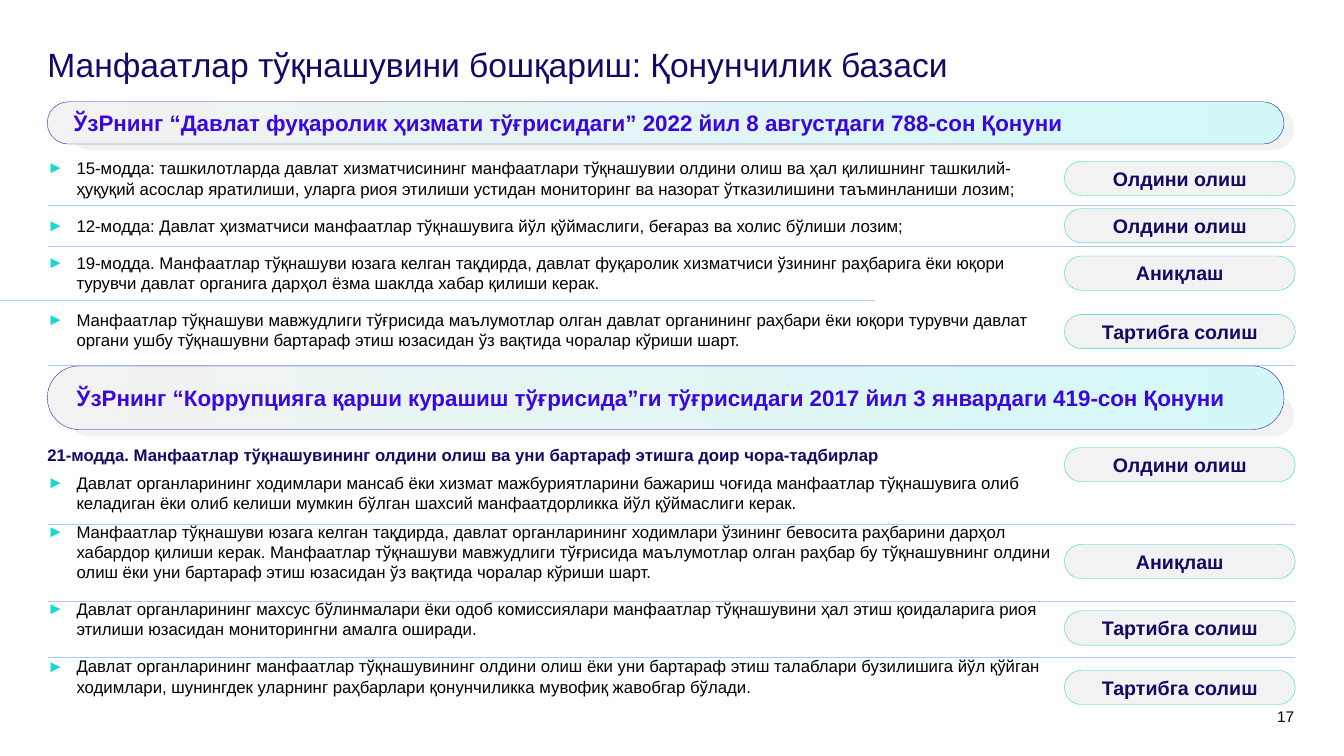
from dataclasses import dataclass

from lxml import etree
from pptx import Presentation
from pptx.dml.color import RGBColor
from pptx.enum.shapes import MSO_CONNECTOR, MSO_SHAPE
from pptx.enum.text import MSO_ANCHOR, MSO_AUTO_SIZE, PP_ALIGN
from pptx.oxml.ns import qn
from pptx.util import Pt

PILL = MSO_SHAPE.ROUNDED_RECTANGLE
STRAIGHT = MSO_CONNECTOR.STRAIGHT
MIDDLE, TOP = MSO_ANCHOR.MIDDLE, MSO_ANCHOR.TOP
GROW, FIXED = MSO_AUTO_SIZE.SHAPE_TO_FIT_TEXT, MSO_AUTO_SIZE.NONE
LEFT, CENTER, RIGHT = PP_ALIGN.LEFT, PP_ALIGN.CENTER, PP_ALIGN.RIGHT


@dataclass(frozen=True)
class Theme:
    font: str = "Arial"
    navy: str = "130A65"
    violet: str = "3A07DF"
    indigo: str = "2112AE"
    teal: str = "1BD7D3"
    aqua: str = "D4F8F8"
    grey: str = "F2F2F2"
    rule: str = "B1C7F7"
    black: str = "000000"
    title_size: int = 24
    banner_size: int = 16
    badge_size: int = 14
    body_size: int = 12
    number_size: int = 11
    hairline: float = 0.25
    indent: float = 20.9
    gap: int = 6


class SlideBuilder:
    def __init__(self, slide, theme):
        self.slide = slide
        self.theme = theme

    def style(self, paragraph, size, color, bold=False, align=LEFT):
        paragraph.alignment = align
        for run in paragraph.runs:
            run.font.name = self.theme.font
            run.font.size = Pt(size)
            run.font.bold = bold
            run.font.color.rgb = RGBColor.from_string(color)

    def frame(self, shape, margins, anchor, auto_size=FIXED):
        frame = shape.text_frame
        frame.word_wrap = True
        frame.auto_size = auto_size
        frame.vertical_anchor = anchor
        (frame.margin_left, frame.margin_top,
         frame.margin_right, frame.margin_bottom) = map(Pt, margins)
        return frame

    def text_box(self, box, margins=(0, 0, 0, 0), auto_size=FIXED):
        holder = self.slide.shapes.add_textbox(*map(Pt, box))
        return self.frame(holder, margins, TOP, auto_size)

    def label(self, text, box, size, color, align=LEFT, spacing=1.0):
        frame = self.text_box(box)
        frame.text = text
        frame.paragraphs[0].line_spacing = spacing
        self.style(frame.paragraphs[0], size, color, align=align)

    def pill(self, shapes, box, outline=None):
        pill = shapes.add_shape(PILL, *map(Pt, box))
        pill.adjustments[0] = 0.5
        pill.shadow.inherit = False
        pill.fill.solid()
        pill.fill.fore_color.rgb = RGBColor.from_string(self.theme.grey)
        if outline:
            pill.line.color.rgb = RGBColor.from_string(outline)
            pill.line.width = Pt(self.theme.hairline)
        else:
            pill.line.fill.background()
        return pill

    def badge(self, text, top):
        pill = self.pill(self.slide.shapes, (760.3, top, 164.9, 24.5), self.theme.teal)
        frame = self.frame(pill, (2.9, 2.9, 2.9, 2.9), MIDDLE)
        frame.text = text
        self.style(frame.paragraphs[0], self.theme.badge_size, self.theme.navy, True, CENTER)

    def banner(self, text, top, height, shade_top):
        group = self.slide.shapes.add_group_shape()
        self.pill(group.shapes, (49, shade_top, 875.5, 30.2))
        front = self.pill(group.shapes, (33.8, top, 883.4, height), self.theme.indigo)
        front.fill.gradient()
        front.fill.gradient_angle = 0
        for stop, color in zip(front.fill.gradient_stops, (self.theme.grey, self.theme.aqua)):
            stop.color.rgb = RGBColor.from_string(color)
        frame = self.frame(front, (14.4, 3.6, 7.2, 3.6), MIDDLE)
        frame.text = text
        self.style(frame.paragraphs[0], self.theme.banner_size, self.theme.violet, True)

    def rule(self, top, left=34.6, right=925.2):
        line = self.slide.shapes.add_connector(STRAIGHT, Pt(left), Pt(top), Pt(right), Pt(top))
        line.line.color.rgb = RGBColor.from_string(self.theme.rule)
        line.line.width = Pt(self.theme.hairline)
        etree.SubElement(line._element.spPr, qn("a:effectLst"))

    def bullet(self, paragraph):
        properties = paragraph._p.get_or_add_pPr()
        properties.set("marL", str(Pt(self.theme.indent)))
        properties.set("indent", str(-Pt(self.theme.indent)))
        color = etree.SubElement(properties, qn("a:buClr"))
        etree.SubElement(color, qn("a:srgbClr"), val=self.theme.teal)
        etree.SubElement(properties, qn("a:buFont"), typeface=self.theme.font)
        etree.SubElement(properties, qn("a:buChar"), char="►")

    def articles(self, box, items, heading=None, tight=1):
        frame = self.text_box(box, (0, 3.6, 0, 3.6), GROW)
        texts = [heading, *items] if heading else items
        for index, text in enumerate(texts):
            paragraph = frame.paragraphs[0] if index == 0 else frame.add_paragraph()
            paragraph.text = text
            is_heading = text == heading
            if not is_heading:
                self.bullet(paragraph)
            paragraph.space_before = Pt(0 if index < tight else self.theme.gap)
            paragraph.space_after = Pt(self.theme.gap)
            color = self.theme.navy if is_heading else self.theme.black
            self.style(paragraph, self.theme.body_size, color, is_heading)


PREVENT, DETECT, RESOLVE = "Олдини олиш", "Аниқлаш", "Тартибга солиш"

CIVIL_SERVICE_ARTICLES = [
    "15-модда: ташкилотларда давлат хизматчисининг манфаатлари тўқнашувии олдини олиш ва ҳал қилишнинг "
    "ташкилий-ҳуқуқий асослар яратилиши, уларга риоя этилиши устидан мониторинг ва назорат "
    "ўтказилишини таъминланиши лозим;",
    "12-модда: Давлат ҳизматчиси манфаатлар тўқнашувига йўл қўймаслиги, беғараз ва холис бўлиши лозим;",
    "19-модда. Манфаатлар тўқнашуви юзага келган тақдирда, давлат фуқаролик хизматчиси ўзининг раҳбарига "
    "ёки юқори турувчи давлат органига дарҳол ёзма шаклда хабар қилиши керак.",
    "Манфаатлар тўқнашуви мавжудлиги тўғрисида маълумотлар олган давлат органининг раҳбари ёки юқори "
    "турувчи давлат органи ушбу тўқнашувни бартараф этиш юзасидан ўз вақтида чоралар кўриши шарт.",
]
ANTI_CORRUPTION_ARTICLES = [
    "Давлат органларининг ходимлари мансаб ёки хизмат мажбуриятларини бажариш чоғида манфаатлар "
    "тўқнашувига олиб келадиган ёки олиб келиши мумкин бўлган шахсий манфаатдорликка йўл "
    "қўймаслиги керак.",
    "Манфаатлар тўқнашуви юзага келган тақдирда, давлат органларининг ходимлари ўзининг бевосита "
    "раҳбарини дарҳол хабардор қилиши керак. Манфаатлар тўқнашуви мавжудлиги тўғрисида маълумотлар "
    "олган раҳбар бу тўқнашувнинг олдини олиш ёки уни бартараф этиш юзасидан ўз вақтида чоралар "
    "кўриши шарт.",
    "Давлат органларининг махсус бўлинмалари ёки одоб комиссиялари манфаатлар тўқнашувини ҳал этиш "
    "қоидаларига риоя этилиши юзасидан мониторингни амалга оширади.",
    "Давлат органларининг манфаатлар тўқнашувининг олдини олиш ёки уни бартараф этиш талаблари "
    "бузилишига йўл қўйган ходимлари, шунингдек уларнинг раҳбарлари қонунчиликка мувофиқ жавобгар бўлади.",
]
CIVIL_SERVICE_BADGES = [(PREVENT, 115.2), (PREVENT, 149), (DETECT, 182.9), (RESOLVE, 224.6)]
ANTI_CORRUPTION_BADGES = [(PREVENT, 319.7), (DETECT, 388.8), (RESOLVE, 436.3), (RESOLVE, 478.8)]


def main():
    deck = Presentation()
    deck.slide_width, deck.slide_height = Pt(960), Pt(540)
    theme = Theme()
    builder = SlideBuilder(deck.slides.add_slide(deck.slide_layouts[6]), theme)

    builder.label("17", (893.5, 505.4, 31, 11.5), theme.number_size, theme.black, RIGHT)
    builder.label("Манфаатлар тўқнашувини бошқариш: Қонунчилик базаси",
                  (33.8, 34.6, 891.4, 34.6), theme.title_size, theme.navy, spacing=0.9)

    builder.articles((33.8, 109.4, 720, 145.4), CIVIL_SERVICE_ARTICLES)
    builder.banner("ЎзРнинг “Давлат фуқаролик ҳизмати тўғрисидаги” 2022 йил 8 августдаги 788-сон Қонуни",
                   72.7, 30.2, 77)
    for top in (146.9, 175.7, 260.6):
        builder.rule(top)
    builder.rule(214.6, left=0, right=624.2)

    builder.articles((33.8, 313.9, 720, 189.4), ANTI_CORRUPTION_ARTICLES,
                     "21-модда. Манфаатлар тўқнашувининг олдини олиш ва уни бартараф этишга доир чора-тадбирлар",
                     tight=3)
    for text, top in CIVIL_SERVICE_BADGES + ANTI_CORRUPTION_BADGES:
        builder.badge(text, top)
    builder.banner("ЎзРнинг “Коррупцияга қарши курашиш тўғрисида”ги тўғрисидаги 2017 йил 3 январдаги 419-сон Қонуни",
                   261.4, 45.4, 281.5)
    for top in (374.4, 429.1, 469.4):
        builder.rule(top)

    deck.save("out.pptx")


if __name__ == "__main__":
    main()
